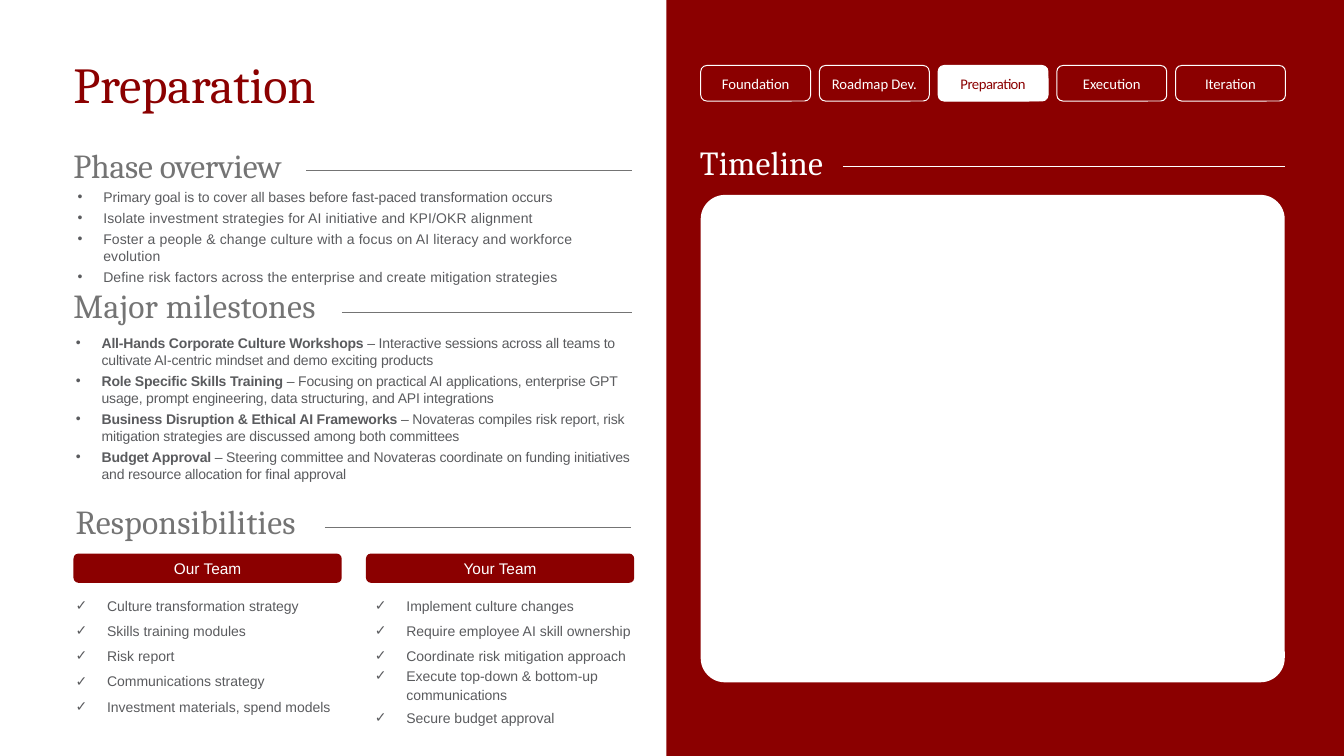
"""Builds the Preparation phase slide with overview, milestones, duties and timeline."""
from dataclasses import dataclass

from lxml import etree
from pptx import Presentation
from pptx.dml.color import RGBColor
from pptx.enum.shapes import MSO_CONNECTOR, MSO_SHAPE
from pptx.enum.text import MSO_ANCHOR, MSO_AUTO_SIZE, PP_ALIGN
from pptx.oxml.ns import qn
from pptx.util import Pt

RECT, ROUND = MSO_SHAPE.RECTANGLE, MSO_SHAPE.ROUNDED_RECTANGLE
LINE = MSO_CONNECTOR.STRAIGHT
LEFT, CENTER = PP_ALIGN.LEFT, PP_ALIGN.CENTER
TOP, MIDDLE = MSO_ANCHOR.TOP, MSO_ANCHOR.MIDDLE
FIXED = MSO_AUTO_SIZE.NONE


@dataclass(frozen=True)
class Theme:
    red: str = "8B0000"
    white: str = "FFFFFF"
    gray: str = "747474"
    ink: str = "5A5B5E"
    serif: str = "Cambria"
    sans: str = "Arial"
    tab: str = "Calibri"
    title: float = 36
    head: float = 24
    team: float = 11
    step: float = 10.5
    body: float = 10


theme = Theme()


def style(frame, face, size, color, spc=0, align=LEFT, anchor=TOP):
    frame.auto_size, frame.vertical_anchor = FIXED, anchor
    frame.margin_left = frame.margin_right = frame.margin_bottom = 0
    frame.margin_top = 0 if anchor == MIDDLE else Pt(0.72)
    for para in frame.paragraphs:
        para.alignment = align
        for run in para.runs:
            run.font.name, run.font.size = face, Pt(size)
            run.font.color.rgb = RGBColor.from_string(color)
            run.font.bold = bool(run.font.bold)
            run.font._element.set("spc", str(spc))


def block(kind, box, fill, edge=None, bend=0):
    shape = slide.shapes.add_shape(kind, *map(Pt, box))
    shape.shadow.inherit = False
    shape.fill.solid()
    shape.fill.fore_color.rgb = RGBColor.from_string(fill)
    if bend:
        shape.adjustments[0] = bend
    if edge:
        shape.line.color.rgb = RGBColor.from_string(edge)
        shape.line.width = Pt(0.72)
    else:
        shape.line.fill.background()
    return shape


deck = Presentation()
deck.slide_width, deck.slide_height = Pt(960), Pt(540)
slide = deck.slides.add_slide(deck.slide_layouts[4])

title = slide.shapes.title
title.left, title.top, title.width, title.height = map(Pt, (52.5, 37.4, 205, 44.6))
title.text_frame.text = "Preparation"
title.text_frame.paragraphs[0].space_before = Pt(1)
style(title.text_frame, theme.serif, theme.title, theme.red, -10, anchor=MIDDLE)

block(RECT, (476, 0, 484, 540), theme.red)
block(ROUND, (500.5, 139.2, 417.2, 348.2), theme.white, bend=0.05)

steps = ("Foundation", "Roadmap Dev.", "Preparation", "Execution", "Iteration")
for i, name in enumerate(steps):
    live = name == "Preparation"
    fill, ink = (theme.white, theme.red) if live else (theme.red, theme.white)
    tab = block(ROUND, (500.5 + 84.8 * i, 46.8, 78.5, 25.4), fill, theme.white, 0.17)
    tab.text_frame.text = name
    style(tab.text_frame, theme.tab, theme.step, ink, -30 if live else 0, CENTER, MIDDLE)

heads = (
    ("Timeline", 500, 100.8, 10, theme.white, 602, 917.7, 118.8),
    ("Phase overview", 52.5, 103, -14, theme.gray, 218.8, 451.4, 121.6),
    ("Major milestones", 52.5, 203, 20, theme.gray, 244.2, 451.4, 223.4),
    ("Responsibilities", 54, 357.1, 20, theme.gray, 232, 450.7, 376.6),
)
for name, left, top, spc, color, start, end, level in heads:
    head = slide.shapes.add_textbox(Pt(left), Pt(top), Pt(180), Pt(30.5)).text_frame
    head.text = name
    head.paragraphs[0].space_before = Pt(1)
    style(head, theme.serif, theme.head, color, spc)
    rule = slide.shapes.add_connector(LINE, *map(Pt, (start, level, end, level)))
    rule.line.color.rgb = RGBColor.from_string(color)
    rule.line.width = Pt(0.96)
    etree.SubElement(rule._element.spPr, qn("a:effectLst"))

for name, left in (("Our Team", 52.5), ("Your Team", 261.4)):
    team = block(ROUND, (left, 395.4, 191.6, 20.9), theme.red, bend=0.17)
    team.text_frame.text = name
    style(team.text_frame, theme.sans, theme.team, theme.white, 0, CENTER, MIDDLE)

lists = (
    (1, (55.4, 133.9, 396.7, 58.3), "•", 18.4, 10, 3, 1, (
        "Primary goal is to cover all bases before fast-paced transformation occurs",
        "Isolate investment strategies for AI initiative and KPI/OKR alignment",
        "Foster a people & change culture with a focus on AI literacy and workforce evolution",
        "Define risk factors across the enterprise and create mitigation strategies")),
    (2, (54.2, 238.3, 397.4, 122.4), "•", 18.4, -10, 3, 1, (
        "All-Hands Corporate Culture Workshops – Interactive sessions across all teams "
        "to cultivate AI-centric mindset and demo exciting products",
        "Role Specific Skills Training – Focusing on practical AI applications, "
        "enterprise GPT usage, prompt engineering, data structuring, and API integrations",
        "Business Disruption & Ethical AI Frameworks – Novateras compiles risk report, "
        "risk mitigation strategies are discussed among both committees",
        "Budget Approval – Steering committee and Novateras coordinate on funding "
        "initiatives and resource allocation for final approval")),
    (3, (54, 419.8, 191.5, 92), "✓", 22.5, 0, 0, 1.5, (
        "Culture transformation strategy", "Skills training modules", "Risk report",
        "Communications strategy", "Investment materials, spend models")),
    (4, (267.8, 419.8, 183.6, 100), "✓", 22.5, 0, 0, 1.5, (
        "Implement culture changes", "Require employee AI skill ownership",
        "Coordinate risk mitigation approach",
        "Execute top-down & bottom-up communications", "Secure budget approval")),
)
for slot, box, mark, dent, spc, gap, pitch, items in lists:
    body = slide.placeholders[slot]
    body.left, body.top, body.width, body.height = map(Pt, box)
    frame = body.text_frame
    frame.word_wrap = True
    frame.text = "\n".join(items)
    for para, item in zip(frame.paragraphs, items):
        lead, dash, rest = item.partition("– ")
        if dash:
            para.text = lead
            para.runs[0].font.bold = True
            para.add_run().text = dash + rest
        para.space_before, para.space_after = Pt(gap), Pt(0)
        para.line_spacing = pitch
        props = para._p.get_or_add_pPr()
        props.set("marL", str(Pt(dent)))
        props.set("indent", str(-Pt(dent)))
        etree.SubElement(props, qn("a:buFont")).set("typeface", theme.sans)
        etree.SubElement(props, qn("a:buChar")).set("char", mark)
    style(frame, theme.sans, theme.body, theme.ink, spc)

goal = slide.placeholders[1].text_frame.paragraphs[0]
goal.space_before = Pt(0.9)
goal.runs[0].font._element.set("spc", "-5")
duties = slide.placeholders[4].text_frame.paragraphs
duties[3].line_spacing, duties[4].line_spacing = Pt(14), Pt(16)

deck.save("out.pptx")
